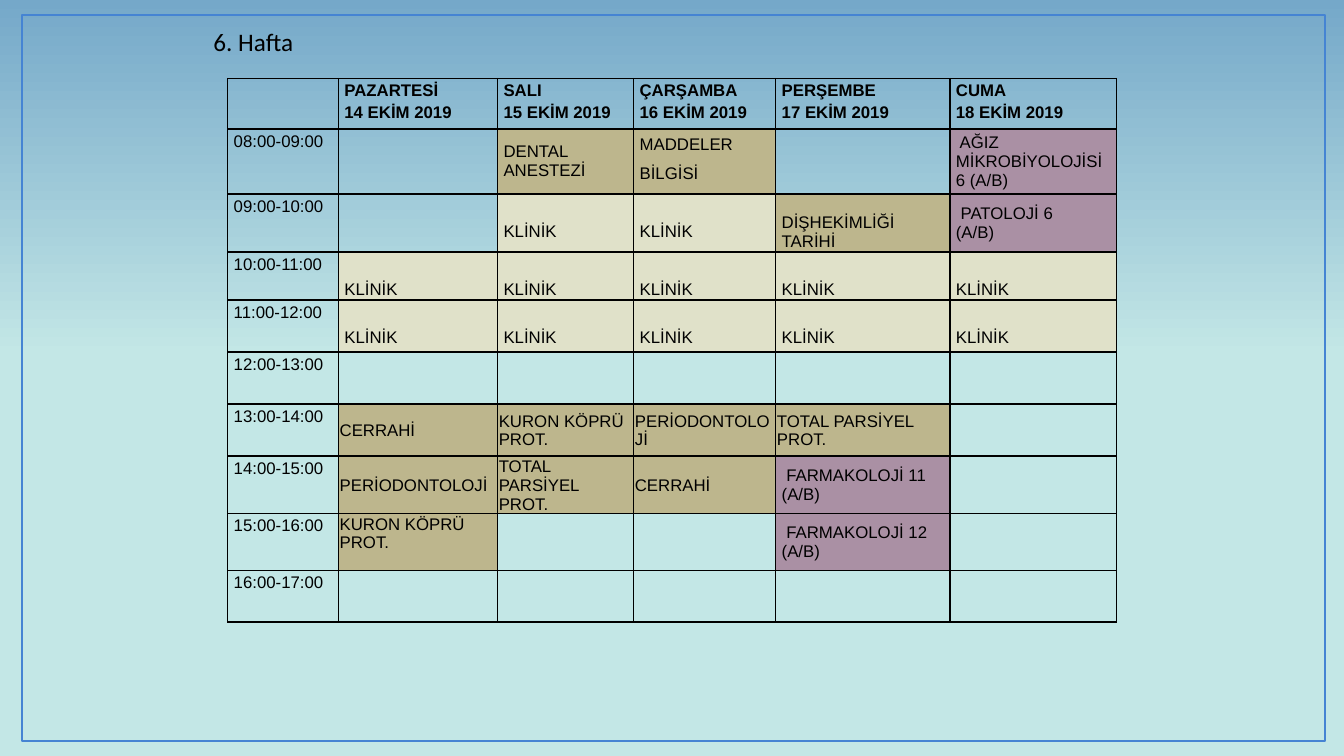
from pptx import Presentation
from pptx.dml.color import RGBColor as Rgb
from pptx.enum.shapes import MSO_SHAPE as Shape
from pptx.enum.text import MSO_ANCHOR as Anchor, MSO_AUTO_SIZE as AutoSize
from pptx.oxml import parse_xml
from pptx.oxml.ns import nsdecls
from pptx.util import Cm, Pt

COLORS = {
    "sky": "75A8C9", "mist": "C3E7E6", "frame": "4584D3", "ink": "000000",
    "tan": "BDB68D", "cream": "E0E1C9", "mauve": "AA90A4",
}

KINDS = {
    "empty": {},
    "head": {"bold": True, "spacing": 1.15},
    "hour": {"spacing": 1.15},
    "lesson": {"fill": "tan", "anchor": Anchor.MIDDLE},
    "spaced": {"fill": "tan", "anchor": Anchor.MIDDLE, "bottom": 0.12, "gap": 7},
    "late": {"fill": "tan", "top": 0.48},
    "tight": {"fill": "tan", "anchor": Anchor.MIDDLE, "side": 0.03, "top": 0.03},
    "upper": {"fill": "tan", "side": 0.03, "top": 0.03},
    "clinic": {"fill": "cream", "top": 0.72},
    "group": {"fill": "mauve", "anchor": Anchor.MIDDLE},
}

DAYS = ["PAZARTESİ", "SALI", "ÇARŞAMBA", "PERŞEMBE", "CUMA"]
FREE = ("empty", "")
CLINIC = ("clinic", "KLİNİK")
SURGERY = ("tight", "CERRAHİ")
PERIO = ("tight", "PERİODONTOLOJİ")
TOTAL = ("tight", "TOTAL PARSİYEL PROT.")
CROWN = "KURON KÖPRÜ PROT."

LESSONS = [
    [FREE, ("lesson", "DENTAL ANESTEZİ"), ("spaced", "MADDELER\nBİLGİSİ"), FREE,
     ("group", " AĞIZ MİKROBİYOLOJİSİ 6 (A/B)")],
    [FREE, CLINIC, CLINIC, ("late", "DİŞHEKİMLİĞİ TARİHİ"), ("group", " PATOLOJİ 6\n(A/B)")],
    [CLINIC] * 5,
    [CLINIC] * 5,
    [FREE] * 5,
    [SURGERY, ("tight", CROWN), PERIO, TOTAL, FREE],
    [PERIO, TOTAL, SURGERY, ("group", " FARMAKOLOJİ 11 (A/B)"), FREE],
    [("upper", CROWN), FREE, FREE, ("group", " FARMAKOLOJİ 12 (A/B)"), FREE],
    [FREE] * 5,
]

COLUMN_WIDTHS = [2.79, 4.01, 3.43, 3.58, 4.39, 4.19]
ROW_HEIGHTS = [1.27, 1.64, 1.46, 1.21, 1.31, 1.31, 1.31, 1.31, 1.44, 1.29]


def write_text(frame, text, font="Arial", size=12, bold=False, spacing=None, gap=0):
    for index, line in enumerate(text.split("\n")):
        para = frame.add_paragraph() if index else frame.paragraphs[0]
        if spacing:
            para.line_spacing = spacing
        if index and gap:
            para.space_before = Pt(gap)
        span = para.add_run()
        span.text = line
        span.font.name = font
        span.font.size = Pt(size)
        span.font.bold = bold
        span.font.color.rgb = Rgb.from_string(COLORS["ink"])


class SlideBuilder:
    def __init__(self, deck):
        self.colors = COLORS
        self.page = deck.slides.add_slide(deck.slide_layouts[6])

    def color(self, name):
        return Rgb.from_string(self.colors[name])

    def background(self, stops, angle):
        fill = self.page.background.fill
        fill.gradient()
        fill.gradient_angle = angle
        for stop, (position, name) in zip(fill.gradient_stops, stops):
            stop.position = position
            stop.color.rgb = self.color(name)

    def frame(self, left, top, width, height):
        box = self.page.shapes.add_shape(
            Shape.RECTANGLE, Cm(left), Cm(top), Cm(width), Cm(height))
        box.shadow.inherit = False
        box.fill.background()
        box.line.color.rgb = self.color("frame")
        box.line.width = Pt(1.5)

    def label(self, text, left, top, width, height, **style):
        box = self.page.shapes.add_textbox(Cm(left), Cm(top), Cm(width), Cm(height))
        box.text_frame.word_wrap = False
        box.text_frame.auto_size = AutoSize.SHAPE_TO_FIT_TEXT
        write_text(box.text_frame, text, **style)

    def border(self, cell):
        properties = cell._tc.get_or_add_tcPr()
        for index, side in enumerate("LRTB"):
            properties.insert(index, parse_xml(
                f'<a:ln{side} {nsdecls("a")} w="12700"><a:solidFill>'
                f'<a:srgbClr val="{self.colors["ink"]}"/></a:solidFill></a:ln{side}>'))

    def fill_cell(self, cell, text, fill=None, anchor=Anchor.TOP, side=0.15,
                  top=0, bottom=0, **style):
        cell.margin_left = cell.margin_right = Cm(side)
        cell.margin_top, cell.margin_bottom = Cm(top), Cm(bottom)
        cell.vertical_anchor = anchor
        if fill:
            cell.fill.solid()
            cell.fill.fore_color.rgb = self.color(fill)
        else:
            cell.fill.background()
        self.border(cell)
        if text:
            write_text(cell.text_frame, text, **style)

    def timetable(self, rows, left, top, widths, heights):
        table = self.page.shapes.add_table(
            len(heights), len(widths), Cm(left), Cm(top),
            Cm(sum(widths)), Cm(sum(heights))).table
        table.first_row = table.horz_banding = False
        for column, width in zip(table.columns, widths):
            column.width = Cm(width)
        for row, height, entries in zip(table.rows, heights, rows):
            row.height = Cm(height)
            for cell, (kind, text) in zip(row.cells, entries):
                self.fill_cell(cell, text, **KINDS[kind])


def main():
    deck = Presentation()
    deck.slide_width, deck.slide_height = Cm(33.87), Cm(19.05)
    builder = SlideBuilder(deck)
    builder.background([(0.53, "mist"), (1, "sky")], 90)
    builder.frame(0.56, 0.38, 32.84, 18.29)
    header = [FREE] + [
        ("head", f"{day}\n{date} EKİM 2019") for date, day in enumerate(DAYS, 14)]
    hours = [
        [("hour", f"{hour:02}:00-{hour + 1:02}:00")] + lessons
        for hour, lessons in enumerate(LESSONS, 8)]
    builder.timetable([header] + hours, 5.74, 1.98, COLUMN_WIDTHS, ROW_HEIGHTS)
    builder.label("6. Hafta", 5.13, 0.53, 2.72, 1.02, font="Calibri", size=18)
    deck.save("out.pptx")


if __name__ == "__main__":
    main()
